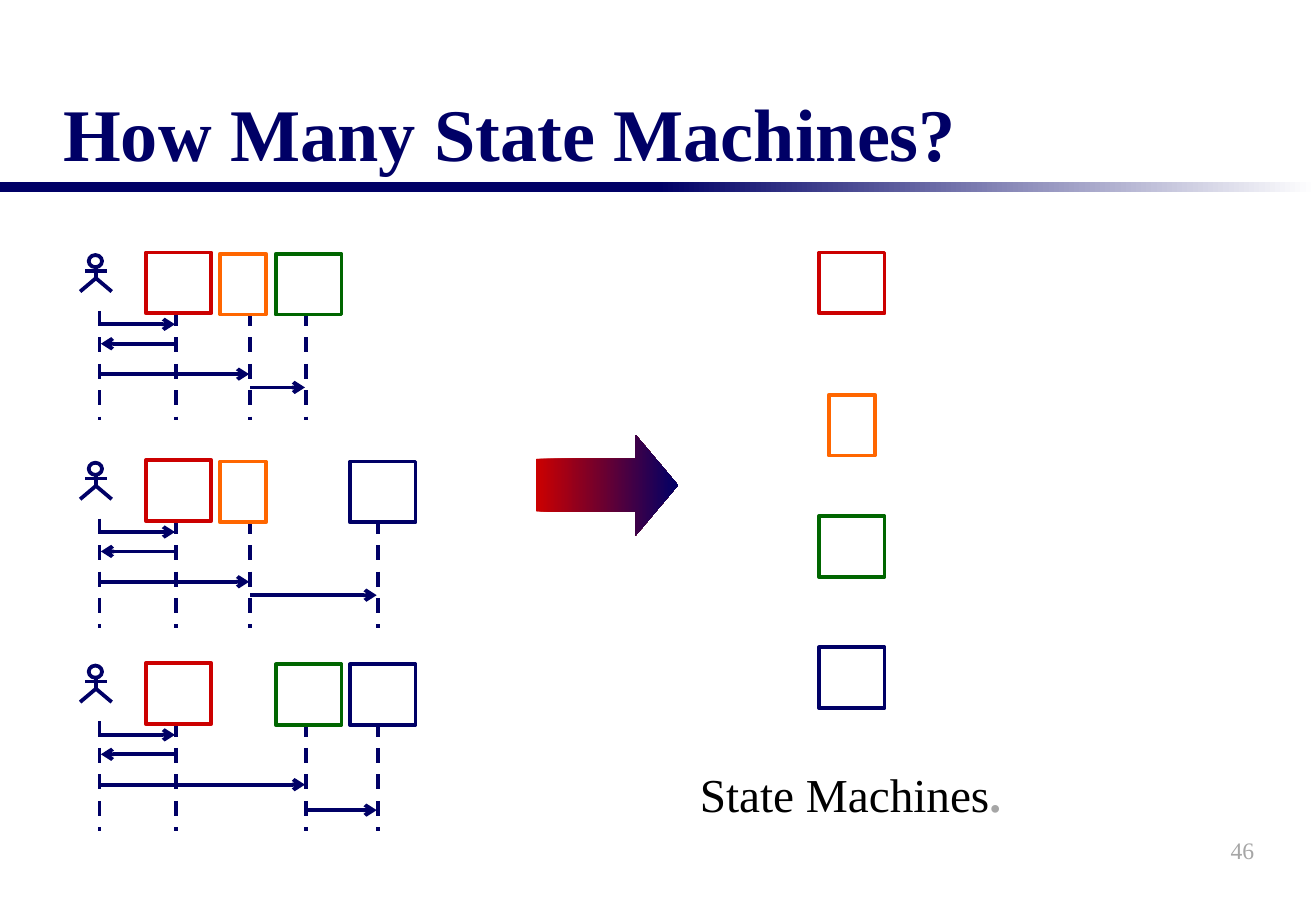
from dataclasses import dataclass

from lxml import etree
from pptx import Presentation
from pptx.dml.color import RGBColor
from pptx.enum import dml, shapes, text
from pptx.oxml import ns
from pptx.util import Inches, Pt


@dataclass(frozen=True)
class Theme:
    font: str = "Times New Roman"
    navy: str = "000066"
    red: str = "CC0000"
    orange: str = "FF6600"
    green: str = "006600"
    white: str = "FFFFFF"
    black: str = "000000"
    grey: str = "A6A6A6"
    title: int = 44
    label: int = 28
    number: int = 14
    stroke: float = 2.25


@dataclass(frozen=True)
class Lane:
    """One participant: box and lifeline measured from the row's corner."""
    colour: str
    left: float
    top: float
    width: float
    life: float


T = Theme()
BOX_H = 0.5
USER_X = 0.16
LANES = {
    "red": Lane(T.red, 0.54, 0, 0.54, 0.79),
    "orange": Lane(T.orange, 1.15, 0.01, 0.38, 1.4),
    "green": Lane(T.green, 1.61, 0.01, 0.54, 1.86),
    "blue": Lane(T.navy, 2.22, 0.01, 0.54, 2.45),
}
# Row top, participants in calling order, height of the last message
SCENARIOS = [
    (2.08, ["red", "orange", "green"], 1.11),
    (3.79, ["red", "orange", "blue"], 1.11),
    (5.46, ["red", "green", "blue"], 1.21),
]
MACHINE_TOPS = {"red": 2.08, "orange": 3.25, "green": 4.25, "blue": 5.33}


def rgb(colour):
    return RGBColor.from_string(colour)


def add_run(p, words, size, colour, **extra):
    r = p.add_run()
    r.text = words
    formats = {"name": T.font, "size": Pt(size), **extra}
    for name, value in formats.items():
        setattr(r.font, name, value)
    r.font.color.rgb = rgb(colour)


def add_text(s, box, align, anchor, runs):
    tf = s.shapes.add_textbox(*map(Inches, box)).text_frame
    tf.word_wrap = True
    tf.vertical_anchor = anchor
    p = tf.paragraphs[0]
    p.alignment = align
    for words, size, colour, extra in runs:
        add_run(p, words, size, colour, **extra)


def outline(sp, colour):
    sp.line.color.rgb = rgb(colour)
    sp.line.width = Pt(T.stroke)


def paint(sp, fill=T.white, line=None, end=None):
    """Solid fill, or a left-to-right gradient when an end colour is given."""
    sp.shadow.inherit = False
    if end:
        sp.fill.gradient()
        sp.fill.gradient_angle = 0
        for stop, colour in zip(sp.fill.gradient_stops, (fill, end)):
            stop.color.rgb = rgb(colour)
    else:
        sp.fill.solid()
        sp.fill.fore_color.rgb = rgb(fill)
    if line:
        outline(sp, line)
    else:
        sp.line.fill.background()


def add_shape(s, kind, box, **colours):
    sp = s.shapes.add_shape(kind, *map(Inches, box))
    paint(sp, **colours)
    return sp


def add_line(s, x1, y1, x2, y2, dash=False, arrow=False):
    sp = s.shapes.add_connector(shapes.MSO_CONNECTOR.STRAIGHT,
                                *map(Inches, (x1, y1, x2, y2)))
    outline(sp, T.navy)
    if dash:
        sp.line.dash_style = dml.MSO_LINE.DASH
    if arrow:
        etree.SubElement(sp.line._get_or_add_ln(), ns.qn("a:tailEnd"), type="arrow")
    etree.SubElement(sp._element.spPr, ns.qn("a:effectLst"))


def header(s, x, y, w, h):
    # Title
    sp = s.shapes.title
    for name, value in zip(("left", "top", "width", "height"), (x + 0.42, y, 10, h)):
        setattr(sp, name, Inches(value))
    tf = sp.text_frame
    tf.vertical_anchor = text.MSO_ANCHOR.BOTTOM
    p = tf.paragraphs[0]
    p.alignment = text.PP_ALIGN.LEFT
    add_run(p, "How Many State Machines?", T.title, T.navy, bold=True)
    # Rule that fades out to the right
    half = w / 2
    for left, end in ((x, None), (x + half, T.white)):
        add_shape(s, shapes.MSO_SHAPE.RECTANGLE, (left, y + h, half, 0.08),
                  fill=T.navy, end=end)


def actor(s, x, y):
    mid = x + 0.13
    add_shape(s, shapes.MSO_SHAPE.OVAL, (x + 0.07, y, 0.11, 0.1), line=T.navy)
    add_line(s, mid, y + 0.1, mid, y + 0.19)
    add_line(s, x + 0.04, y + 0.13, x + 0.22, y + 0.13)
    legs = [(Inches(x + dx), Inches(y + dy))
            for dx, dy in ((0, 0.3), (0.13, 0.19), (0.26, 0.3))]
    path = s.shapes.build_freeform(*legs[0])
    path.add_line_segments(legs[1:], close=False)
    paint(path.convert_to_shape(), line=T.navy)


def machine(s, lane, x, y):
    add_shape(s, shapes.MSO_SHAPE.RECTANGLE, (x, y, lane.width, BOX_H),
              line=lane.colour)


def scenario(s, x, y, names, last):
    lanes = [LANES[name] for name in names]
    lives = [x + USER_X] + [x + lane.life for lane in lanes]
    actor(s, x, y + 0.02)
    # Lifelines
    for life in lives:
        add_line(s, life, y + 0.48, life, y + 1.38, dash=True)
    # Messages: call, reply, second call, forwarded call
    user, first, second, third = lives
    for start, stop, dy in ((user, first, 0.59), (first, user, 0.75),
                            (user, second, 1.0), (second, third, last)):
        gap = 0.01 if stop > start else -0.01
        add_line(s, start, y + dy, stop - gap, y + dy, arrow=True)
    # Participants
    for lane in lanes:
        machine(s, lane, x + lane.left, y + lane.top)


def result(s, x, w):
    # Arrow from scenarios to machines
    sp = add_shape(s, shapes.MSO_SHAPE.RIGHT_ARROW, (x - 1.25, 3.58, 1.17, 0.83),
                   fill=T.red, end=T.navy)
    sp.adjustments[0], sp.adjustments[1] = 0.52, 0.42
    # One machine per participant, centred above the label
    for name, top in MACHINE_TOPS.items():
        lane = LANES[name]
        machine(s, lane, x + (w - lane.width) / 2 + 0.01, top)
    add_text(s, (x, 6.25, w, 0.57), text.PP_ALIGN.CENTER, text.MSO_ANCHOR.TOP,
             [("State Machines", T.label, T.black, {}),
              (".", T.label, T.grey, {"bold": True})])


def main():
    prs = Presentation()
    prs.slide_width, prs.slide_height = Inches(10.83), Inches(7.5)
    s = prs.slides.add_slide(prs.slide_layouts[5])
    header(s, 0, 0.29, 10.83, 1.21)
    for top, names, last in SCENARIOS:
        scenario(s, 0.66, top, names, last)
    result(s, 5.66, 2.68)
    # Slide number
    add_text(s, (8.16, 6.75, 2.26, 0.5), text.PP_ALIGN.RIGHT,
             text.MSO_ANCHOR.MIDDLE, [("46", T.number, T.grey, {})])
    prs.save("out.pptx")


if __name__ == "__main__":
    main()
